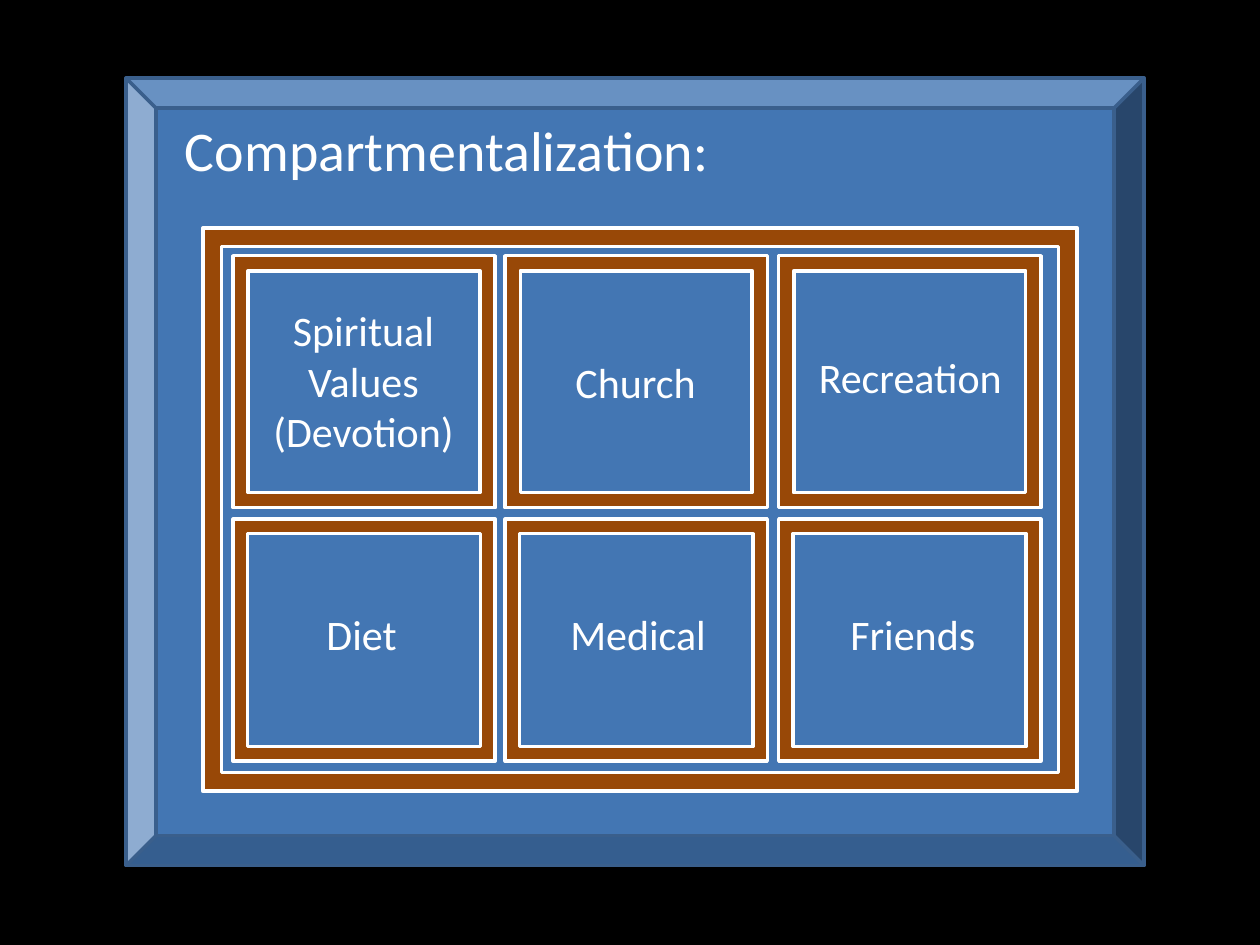
from pptx import Presentation
from pptx.dml.color import RGBColor
from pptx.enum.shapes import MSO_SHAPE as Shape
from pptx.enum.text import PP_ALIGN as Align, MSO_AUTO_SIZE as Fit
from pptx.util import Inches, Pt

BLACK = RGBColor(0x00, 0x00, 0x00)
WHITE = RGBColor(0xFF, 0xFF, 0xFF)
BLUE = RGBColor(0x43, 0x76, 0xB3)
NAVY = RGBColor(0x3A, 0x5F, 0x8C)
BROWN = RGBColor(0x98, 0x48, 0x07)

deck = Presentation()
deck.slide_width, deck.slide_height = Inches(10), Inches(7.5)
slide = deck.slides.add_slide(deck.slide_layouts[6])
slide.background.fill.solid()
slide.background.fill.fore_color.rgb = BLACK


def add_panel(kind, box, rim, fill=BROWN, line=WHITE):
    panel = slide.shapes.add_shape(kind, *map(Inches, box))
    panel.adjustments[0] = rim
    panel.shadow.inherit = False
    panel.fill.solid()
    panel.fill.fore_color.rgb = fill
    panel.line.color.rgb = line
    panel.line.width = Pt(2)


def add_text(text, box, size=24, align=Align.CENTER):
    frame = slide.shapes.add_textbox(*map(Inches, box)).text_frame
    frame.word_wrap = True
    frame.auto_size = Fit.SHAPE_TO_FIT_TEXT
    frame.text = text
    for para in frame.paragraphs:
        para.alignment = align
        para.font.size = Pt(size)
        para.font.name = "Calibri"
        para.font.color.rgb = WHITE


# Bevelled board
add_panel(Shape.BEVEL, (1, 0.62, 8.08, 6.25), 0.038, BLUE, NAVY)

# Compartments: each label has its inset, width and height inside the cell
COLS = (1.85, 4.01, 6.18)
ROWS = ((2.03, 2), (4.12, 1.92))
WIDE = 2.08
LABELS = (
    (("Spiritual\nValues\n(Devotion)", 0.16, 0.34, 1.75, 1.31),
     ("Church", 0.18, 0.75, 1.71, 0.5),
     ("Recreation", 0.19, 0.71, 1.71, 0.5)),
    (("Diet", 0.29, 0.66, 1.46, 0.5),
     ("Medical", 0.39, 0.66, 1.33, 0.5),
     ("Friends", 0.4, 0.66, 1.33, 0.5)),
)
for (top, high), labels in zip(ROWS, LABELS):
    for left, (text, dx, dy, width, height) in zip(COLS, labels):
        add_panel(Shape.FRAME, (left, top, WIDE, high), 0.06)
        add_text(text, (left + dx, top + dy, width, height))

# Title
add_text("Compartmentalization:", (1.37, 0.87, 5, 0.64), size=32, align=Align.LEFT)

# Outer frame
add_panel(Shape.FRAME, (1.61, 1.81, 6.94, 4.47), 0.033)

deck.save("out.pptx")
